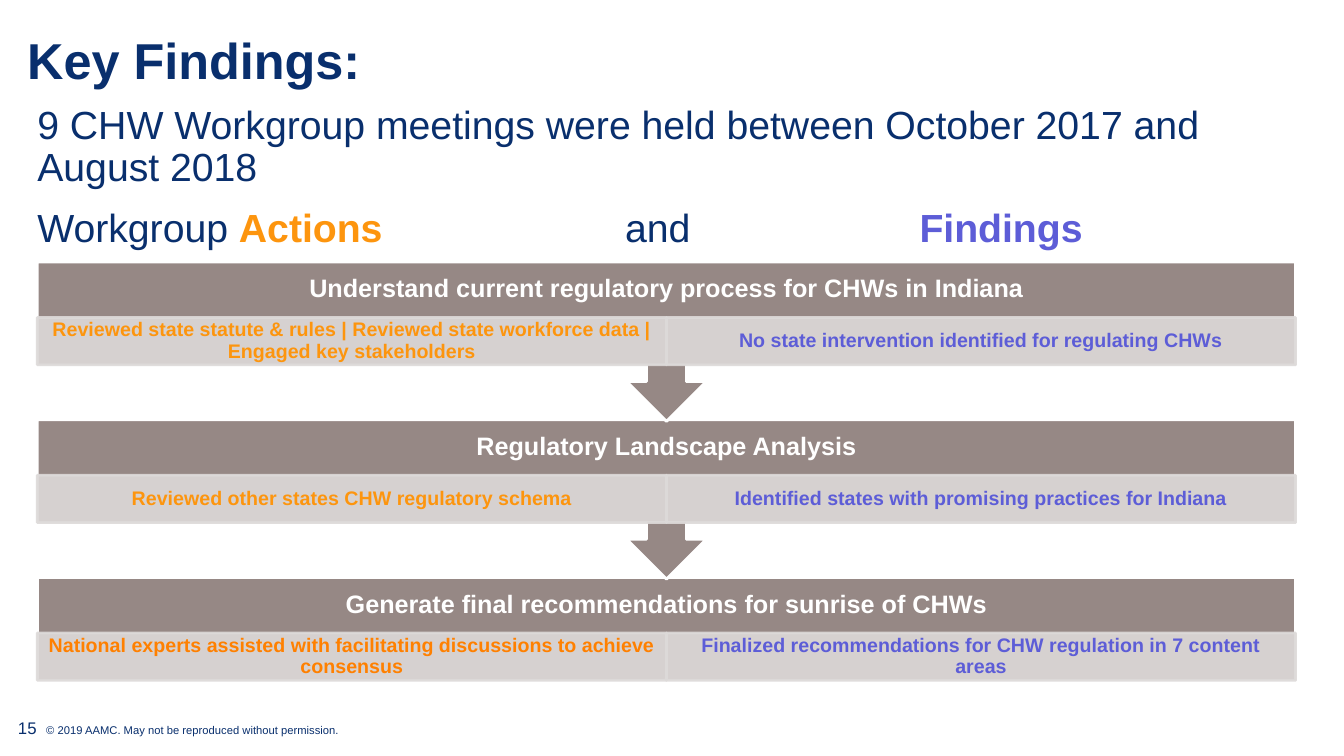
from lxml import etree
from pptx import Presentation
from pptx.dml.color import RGBColor
from pptx.enum.shapes import MSO_SHAPE
from pptx.enum.text import MSO_ANCHOR, MSO_AUTO_SIZE, PP_ALIGN
from pptx.oxml.ns import qn
from pptx.util import Inches, Pt

COLORS = {
    "navy": "092F6D",
    "orange": "FD950E",
    "deep_orange": "FF8000",
    "violet": "5D5DD7",
    "taupe": "968885",
    "light": "DDDAD9",
    "white": "FFFFFF",
}
LEFT, WIDTH = 0.37, 12.48
HEADER_HEIGHT, DETAIL_HEIGHT = 0.55, 0.47
FIRST_TOP, PITCH = 2.6, 1.565

# Header, action, action colour, finding
STEPS = [
    ("Understand current regulatory process for CHWs in Indiana",
     "Reviewed state statute & rules | Reviewed state workforce data | Engaged key stakeholders",
     "orange", "No state intervention identified for regulating CHWs"),
    ("Regulatory Landscape Analysis", "Reviewed other states CHW regulatory schema",
     "orange", "Identified states with promising practices for Indiana"),
    ("Generate final recommendations for sunrise of CHWs",
     "National experts assisted with facilitating discussions to achieve consensus",
     "deep_orange", "Finalized recommendations for CHW regulation in 7 content areas"),
]


def rgb(name):
    return RGBColor.from_string(COLORS[name])


def box(left, top, width, height):
    return [Inches(v) for v in (left, top, width, height)]


def set_frame(tf, anchor, inset_x=0.0, inset_y=0.0):
    tf.word_wrap = True
    tf.auto_size = MSO_AUTO_SIZE.NONE
    tf.vertical_anchor = anchor
    tf.margin_left = tf.margin_right = Inches(inset_x)
    tf.margin_top = tf.margin_bottom = Inches(inset_y)


def set_font(font, size, color, bold=False):
    font.name = "Arial"
    font.size = Pt(size)
    font.bold = bold
    font.color.rgb = rgb(color)


def write(tf, text, size, color, bold=False, align=PP_ALIGN.LEFT, spacing=1.0):
    p = tf.paragraphs[0]
    p.text = text
    p.alignment = align
    p.line_spacing = spacing
    set_font(p.font, size, color, bold)


def add_text(slide, bounds, text, size, color, inset=(0.1, 0.05), **style):
    tf = slide.shapes.add_textbox(*box(*bounds)).text_frame
    set_frame(tf, MSO_ANCHOR.MIDDLE, *inset)
    write(tf, text, size, color, **style)


def add_block(slide, kind, bounds, fill, line):
    sp = slide.shapes.add_shape(kind, *box(*bounds))
    sp.shadow.inherit = False
    sp.fill.solid()
    sp.fill.fore_color.rgb = rgb(fill)
    sp.line.color.rgb = rgb(line)
    sp.line.width = Pt(2)
    return sp


def set_alpha(sp, percent):
    """Make the fill and the outline partly transparent."""
    for color in sp._element.spPr.iter(qn("a:srgbClr")):
        etree.SubElement(color, qn("a:alpha")).set("val", str(percent * 1000))


def add_tab_stops(p, *positions):
    tabs = etree.SubElement(p._p.get_or_add_pPr(), qn("a:tabLst"))
    for position in positions:
        tab = etree.SubElement(tabs, qn("a:tab"))
        tab.set("pos", str(Inches(position)))
        tab.set("algn", "l")


def add_title(slide):
    title = slide.shapes.title
    title.left, title.top, title.width, title.height = box(0.27, 0.21, 12.35, 0.68)
    set_frame(title.text_frame, MSO_ANCHOR.BOTTOM)
    write(title.text_frame, "Key Findings:", 36, "navy", bold=True, spacing=0.85)


def add_intro(slide):
    tf = slide.shapes.add_textbox(*box(LEFT, 1.06, 12.38, 1.5)).text_frame
    set_frame(tf, MSO_ANCHOR.TOP)
    write(tf, "9 CHW Workgroup meetings were held between October 2017 and August 2018",
          28, "navy", spacing=0.88)
    p = tf.add_paragraph()
    p.line_spacing = 0.88
    p.space_before = Pt(14)
    add_tab_stops(p, 5.83, 8.75)
    for text, color, bold in [("Workgroup ", "navy", False), ("Actions", "orange", True),
                              ("\tand\t", "navy", False), ("Findings", "violet", True)]:
        r = p.add_run()
        r.text = text
        set_font(r.font, 28, color, bold)


def add_detail(slide, left, top, text, color):
    sp = add_block(slide, MSO_SHAPE.RECTANGLE, (left, top, WIDTH / 2, DETAIL_HEIGHT),
                   "light", "light")
    set_alpha(sp, 90)
    set_frame(sp.text_frame, MSO_ANCHOR.MIDDLE, 0.11, 0.02)
    write(sp.text_frame, text, 14, color, bold=True, align=PP_ALIGN.CENTER, spacing=0.9)


def add_step(slide, index, header, action, action_color, finding):
    top = FIRST_TOP + index * PITCH
    if index == len(STEPS) - 1:
        add_block(slide, MSO_SHAPE.RECTANGLE, (LEFT, top, WIDTH, 1.03), "taupe", "white")
    else:
        callout = add_block(slide, MSO_SHAPE.UP_ARROW_CALLOUT, (LEFT, top, WIDTH, 1.58),
                            "taupe", "white")
        callout.rotation = 180
    add_text(slide, (LEFT, top, WIDTH, HEADER_HEIGHT), header, 18, "white",
             inset=(0.14, 0.14), bold=True, align=PP_ALIGN.CENTER, spacing=0.9)
    detail_top = top + HEADER_HEIGHT
    add_detail(slide, LEFT, detail_top, action, action_color)
    add_detail(slide, LEFT + WIDTH / 2, detail_top, finding, "violet")


def main():
    prs = Presentation()
    prs.slide_width, prs.slide_height = Inches(13.33), Inches(7.5)
    slide = prs.slides.add_slide(prs.slide_layouts[5])
    add_text(slide, (0.36, 7.13, 8.22, 0.23),
             "© 2019 AAMC. May not be reproduced without permission.", 8, "navy")
    add_text(slide, (0.08, 7.02, 0.57, 0.4), "15", 12, "navy")
    add_title(slide)
    add_intro(slide)
    # Last step first, so that each arrow tip lies over the step below it
    for index, step in reversed(list(enumerate(STEPS))):
        add_step(slide, index, *step)
    prs.save("out.pptx")


if __name__ == "__main__":
    main()
